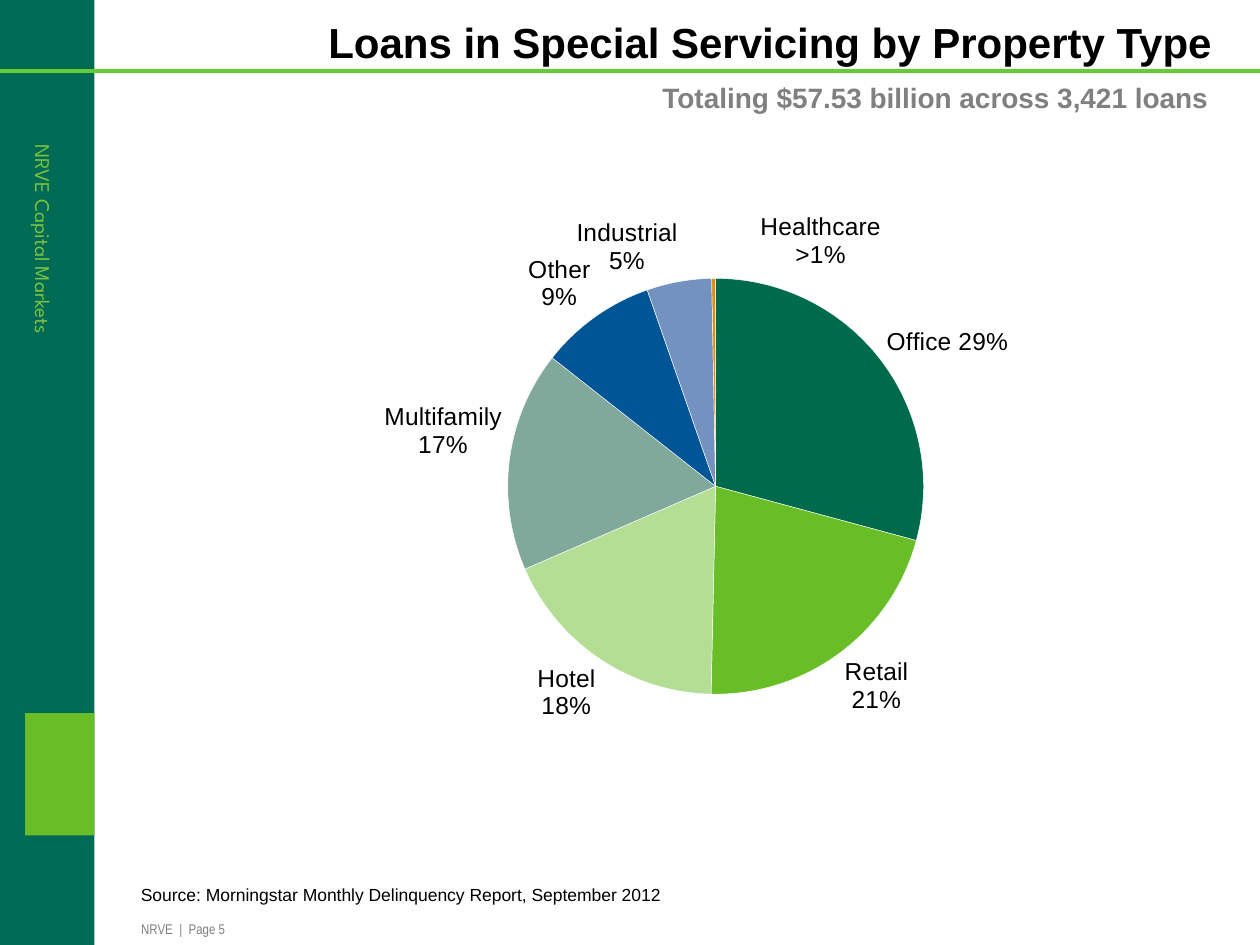
from lxml.etree import SubElement
from pptx import Presentation
from pptx.chart.data import CategoryChartData
from pptx.dml.color import RGBColor
from pptx.enum.chart import XL_CHART_TYPE, XL_LABEL_POSITION
from pptx.enum.shapes import MSO_CONNECTOR, MSO_SHAPE
from pptx.enum.text import MSO_ANCHOR, PP_ALIGN
from pptx.oxml import parse_xml
from pptx.oxml.ns import nsdecls, qn
from pptx.util import Inches, Pt

DARK_GREEN = RGBColor(0x00, 0x6B, 0x54)
BRIGHT_GREEN = RGBColor(0x69, 0xBE, 0x28)
RULE_GREEN = RGBColor(0x66, 0xCC, 0x33)
SIDE_GREEN = RGBColor(0x7A, 0xC1, 0x42)
GREY = RGBColor(0x80, 0x80, 0x80)
BLACK = RGBColor(0, 0, 0)
WHITE = RGBColor(0xFF, 0xFF, 0xFF)

TITLE = "Loans in Special Servicing by Property Type"
SUBTITLE = "Totaling $57.53 billion across 3,421 loans"
SOURCE = "Source: Morningstar Monthly Delinquency Report, September 2012"
FOOTER = "NRVE  |  Page 5"
SIDE_TEXT = "NRVE Capital Markets"
PROPERTY_TYPES = [
    ("Office", 29, RGBColor(0x00, 0x6A, 0x4D), "Office 29%"),
    ("Retail", 21, BRIGHT_GREEN, None),
    ("Hotel", 18, RGBColor(0xB4, 0xDE, 0x93), None),
    ("Multifamily", 17, RGBColor(0x80, 0xA8, 0x9B), None),
    ("Other", 9, RGBColor(0x00, 0x55, 0x96), "Other\n9%"),
    ("Industrial", 5, RGBColor(0x73, 0x92, 0xC0), None),
    ("Healthcare", 0.3, RGBColor(0xDD, 0x8E, 0x0E), "Healthcare\n>1%"),
]
CHART_BOX = (0.55, 1.37, 10.22, 5.65)
PLOT_BOX = {"x": 3.48, "y": 0.78, "w": 3.3, "h": 3.42}
HEALTHCARE_OFFSET = {"x": 0.85, "y": -0.02}


def style_font(font, size, color, name="Arial", bold=False):
    font.size, font.name, font.bold = Pt(size), name, bold
    font.color.rgb = color


def write_text(shape, text, size, color, name="Arial", bold=False,
               align=PP_ALIGN.LEFT, insets=(0, 0), anchor=MSO_ANCHOR.TOP):
    frame = shape.text_frame
    frame.word_wrap = True
    frame.vertical_anchor = anchor
    frame.margin_left = frame.margin_right = Inches(insets[0])
    frame.margin_top = frame.margin_bottom = Inches(insets[1])
    paragraph = frame.paragraphs[0]
    paragraph.alignment = align
    run = paragraph.add_run()
    run.text = text
    style_font(run.font, size, color, name, bold)


def add_block(slide, box, color):
    block = slide.shapes.add_shape(MSO_SHAPE.RECTANGLE, *map(Inches, box))
    block.shadow.inherit = False
    block.fill.solid()
    block.fill.fore_color.rgb = color
    block.line.fill.background()
    return block


def make_layout(lengths, **modes):
    layout = parse_xml(f"<c:layout {nsdecls('c')}/>")
    manual = SubElement(layout, qn("c:manualLayout"))
    _, _, width, height = CHART_BOX
    shares = {key: length / (width if key in "xw" else height)
              for key, length in lengths.items()}
    for key, value in {**modes, **shares}.items():
        SubElement(manual, qn(f"c:{key}")).set("val", str(value))
    return layout


def add_frame(slide):
    add_block(slide, (0, 0, 0.75, 7.5), DARK_GREEN)
    add_block(slide, (0.2, 5.66, 0.55, 0.97), BRIGHT_GREEN)
    footer = add_block(slide, (1.12, 7.31, 1.48, 0.17), WHITE)
    write_text(footer, FOOTER, 8, GREY, "Arial Narrow")
    rule = slide.shapes.add_connector(
        MSO_CONNECTOR.STRAIGHT, 0, Inches(0.56), Inches(10), Inches(0.56))
    rule.line.color.rgb = RULE_GREEN
    rule.line.width = Pt(2.25)
    SubElement(rule._element.spPr, qn("a:effectLst"))
    side = slide.shapes.add_textbox(*map(Inches, (-0.49, 1.91, 1.7, 0.17)))
    side.rotation = 90
    write_text(side, SIDE_TEXT, 12, SIDE_GREEN, "League Spartan")


def add_texts(slide):
    title = slide.shapes.title
    title.left, title.top, title.width, title.height = map(Inches, (1.12, 0.06, 8.5, 0.47))
    write_text(title, TITLE, 24, BLACK, bold=True,
               align=PP_ALIGN.RIGHT, anchor=MSO_ANCHOR.BOTTOM)
    subtitle = slide.shapes.add_textbox(*map(Inches, (1.03, 0.6, 8.65, 0.36)))
    write_text(subtitle, SUBTITLE, 16, GREY, bold=True,
               align=PP_ALIGN.RIGHT, insets=(0.09, 0.04))
    source = slide.shapes.add_textbox(*map(Inches, (1.02, 6.97, 5, 0.27)))
    write_text(source, SOURCE, 10, BLACK, insets=(0.1, 0.05))


def add_pie(slide):
    data = CategoryChartData()
    data.categories = [category for category, *_ in PROPERTY_TYPES]
    data.add_series("Series 1", [value for _, value, *_ in PROPERTY_TYPES])
    chart = slide.shapes.add_chart(
        XL_CHART_TYPE.PIE, *map(Inches, CHART_BOX), data).chart
    chart.has_legend = chart.has_title = False
    style_font(chart.font, 14, BLACK)
    plot = chart.plots[0]
    plot.vary_by_categories = True
    series = plot.series[0]

    labels = series.data_labels
    labels.show_category_name = labels.show_percentage = True
    labels.show_value = False
    labels.number_format, labels.number_format_is_linked = "0%", False
    labels.position = XL_LABEL_POSITION.OUTSIDE_END
    style_font(labels.font, 14, BLACK)
    for leader in labels._element.findall(qn("c:showLeaderLines")):
        labels._element.remove(leader)
    separator = parse_xml(f"<c:separator {nsdecls('c')}>\n</c:separator>")
    labels._element.find(qn("c:showBubbleSize")).addnext(separator)
    separator.addnext(parse_xml(f'<c:showLeaderLines {nsdecls("c")} val="0"/>'))

    for index, (_, _, color, text) in enumerate(PROPERTY_TYPES):
        point = series.points[index]
        point.format.fill.solid()
        point.format.fill.fore_color.rgb = color
        point.format.line.color.rgb = WHITE
        point.format.line.width = Pt(0.25)
        if text:
            frame = point.data_label.text_frame
            for number, line in enumerate(text.split("\n")):
                paragraph = frame.add_paragraph() if number else frame.paragraphs[0]
                run = paragraph.add_run()
                run.text = line
                style_font(run.font, 14, BLACK)
            point.data_label.position = XL_LABEL_POSITION.OUTSIDE_END

    plot_area = chart._chartSpace.chart.plotArea
    for layout in plot_area.findall(qn("c:layout")):
        plot_area.remove(layout)
    plot_area.insert(0, make_layout(
        PLOT_BOX, layoutTarget="inner", xMode="edge", yMode="edge"))
    healthcare = labels._element.findall(qn("c:dLbl"))[-1]
    healthcare.find(qn("c:idx")).addnext(make_layout(HEALTHCARE_OFFSET))


def main():
    """Build the special servicing slide."""
    presentation = Presentation()
    presentation.slide_width, presentation.slide_height = Inches(10), Inches(7.5)
    slide = presentation.slides.add_slide(presentation.slide_layouts[5])
    add_frame(slide)
    add_texts(slide)
    add_pie(slide)
    presentation.save("out.pptx")


if __name__ == "__main__":
    main()
